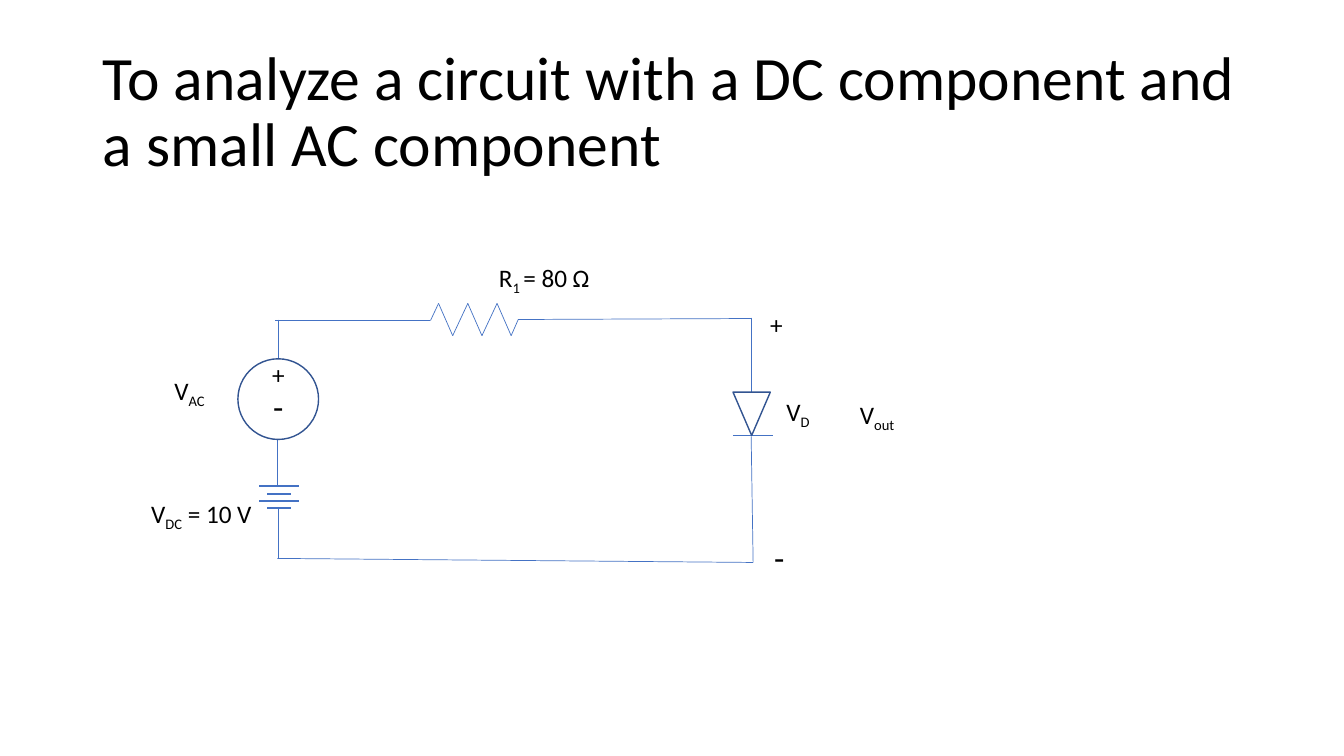
from dataclasses import dataclass
from itertools import pairwise
from typing import Any

from lxml import etree
from pptx import Presentation
from pptx.dml.color import RGBColor
from pptx.enum import shapes, text
from pptx.oxml.ns import qn
from pptx.util import Inches, Pt

Point = tuple[float, float]


@dataclass(frozen=True)
class Theme:
    font: str = "Calibri"
    ink: str = "000000"
    wire: str = "4472C4"
    outline: str = "325491"
    title_size: float = 44
    label_size: float = 18
    minus_size: float = 24
    thin: float = 0.5
    thick: float = 1


@dataclass(frozen=True)
class Wire:
    start: Point
    end: Point
    weight: float = 0.5


@dataclass(frozen=True)
class Symbol:
    kind: Any
    box: tuple[float, float, float, float]
    rotation: float = 0


@dataclass(frozen=True)
class Label:
    box: tuple[float, float, float, float]
    base: str
    sub: str = ""
    tail: str = ""
    size: float = 18


THEME = Theme()

# Resistor zigzag: six alternating peaks between the two leads
peaks = [(round(4.35 + 0.144 * i, 2), 3.33 if i % 2 else 3.01) for i in range(6)]
resistor = [(4.27, 3.18), *peaks, (5.14, 3.17)]

# Battery plates: alternating long and short, centred on the left branch
plates = [
    Wire((2.77 - half, y), (2.77 + half, y), THEME.thick)
    for half, y in ((0.2, 4.82), (0.12, 4.9), (0.2, 4.97), (0.12, 5.04))
]

WIRES = [
    Wire((2.76, 3.17), (2.76, 3.56)),
    Wire((2.75, 4.37), (2.75, 4.82)),
    Wire((2.76, 5.04), (2.76, 5.54)),
    Wire((2.73, 3.18), (4.27, 3.18)),
    *(Wire(a, b) for a, b in pairwise(resistor)),
    Wire((5.14, 3.17), (7.45, 3.16)),
    Wire((7.45, 3.15), (7.45, 3.9)),
    Wire((7.27, 4.32), (7.67, 4.32)),
    Wire((7.45, 4.33), (7.47, 5.58)),
    Wire((2.75, 5.54), (7.47, 5.58)),
    *plates,
]

SYMBOLS = [
    Symbol(shapes.MSO_SHAPE.OVAL, (2.36, 3.56, 0.8, 0.8)),
    Symbol(shapes.MSO_SHAPE.ISOSCELES_TRIANGLE, (7.27, 3.89, 0.37, 0.43), 180),
]

LABELS = [
    Label((2.6, 3.52, 0.36, 0.4), "+"),
    Label((2.61, 3.78, 0.36, 0.5), "-", size=THEME.minus_size),
    Label((1.63, 3.67, 0.72, 0.4), "V", "AC"),
    Label((1.4, 4.89, 1.33, 0.4), "V", "DC", " = 10 V"),
    Label((4.85, 2.55, 1.73, 0.4), "R", "1 ", "= 80 Ω"),
    Label((7.7, 3.88, 0.52, 0.4), "V", "D"),
    Label((8.43, 3.91, 0.6, 0.4), "V", "out"),
    Label((7.54, 3.02, 0.36, 0.4), "+"),
    Label((7.58, 5.28, 0.36, 0.5), "-", size=THEME.minus_size),
]


def apply(target: Any, values: dict[str, Any]) -> None:
    for name, value in values.items():
        setattr(target, name, value)


def add_run(p: Any, content: str, size: float, subscript: bool = False) -> None:
    r = p.add_run()
    r.text = content
    apply(r.font, {"name": THEME.font, "size": Pt(size)})
    r.font.color.rgb = RGBColor.from_string(THEME.ink)
    if subscript:
        r._r.get_or_add_rPr().set("baseline", "-25000")


def set_line(sp: Any, color: str, weight: float) -> None:
    sp.line.color.rgb = RGBColor.from_string(color)
    sp.line.width = Pt(weight)


def add_title(slide: Any, content: str) -> None:
    sp = slide.shapes.title
    apply(sp, {"left": Inches(0.92), "top": Inches(0.4),
               "width": Inches(11.5), "height": Inches(1.45)})
    tf = sp.text_frame
    apply(tf, {"word_wrap": True, "auto_size": text.MSO_AUTO_SIZE.NONE,
               "vertical_anchor": text.MSO_ANCHOR.MIDDLE})
    p = tf.paragraphs[0]
    apply(p, {"alignment": text.PP_ALIGN.LEFT, "line_spacing": 0.9})
    add_run(p, content, THEME.title_size)


def add_wire(slide: Any, wire: Wire) -> None:
    ends = [Inches(v) for v in (*wire.start, *wire.end)]
    sp = slide.shapes.add_connector(shapes.MSO_CONNECTOR.STRAIGHT, *ends)
    set_line(sp, THEME.wire, wire.weight)
    etree.SubElement(sp._element.spPr, qn("a:effectLst"))


def add_symbol(slide: Any, symbol: Symbol) -> None:
    sp = slide.shapes.add_shape(symbol.kind, *map(Inches, symbol.box))
    sp.rotation = symbol.rotation
    sp.shadow.inherit = False
    sp.fill.background()
    set_line(sp, THEME.outline, THEME.thick)


def add_label(slide: Any, label: Label) -> None:
    tf = slide.shapes.add_textbox(*map(Inches, label.box)).text_frame
    apply(tf, {"word_wrap": True, "auto_size": text.MSO_AUTO_SIZE.SHAPE_TO_FIT_TEXT})
    for content, subscript in ((label.base, False), (label.sub, True), (label.tail, False)):
        if content:
            add_run(tf.paragraphs[0], content, label.size, subscript)


def main() -> None:
    prs = Presentation()
    apply(prs, {"slide_width": Inches(13.33), "slide_height": Inches(7.5)})
    slide = prs.slides.add_slide(prs.slide_layouts.get_by_name("Title Only"))
    add_title(slide, "To analyze a circuit with a DC component and a small AC component")

    # Circuit, from wiring up to labels
    for wire in WIRES:
        add_wire(slide, wire)
    for symbol in SYMBOLS:
        add_symbol(slide, symbol)
    for label in LABELS:
        add_label(slide, label)

    prs.save("out.pptx")


if __name__ == "__main__":
    main()
